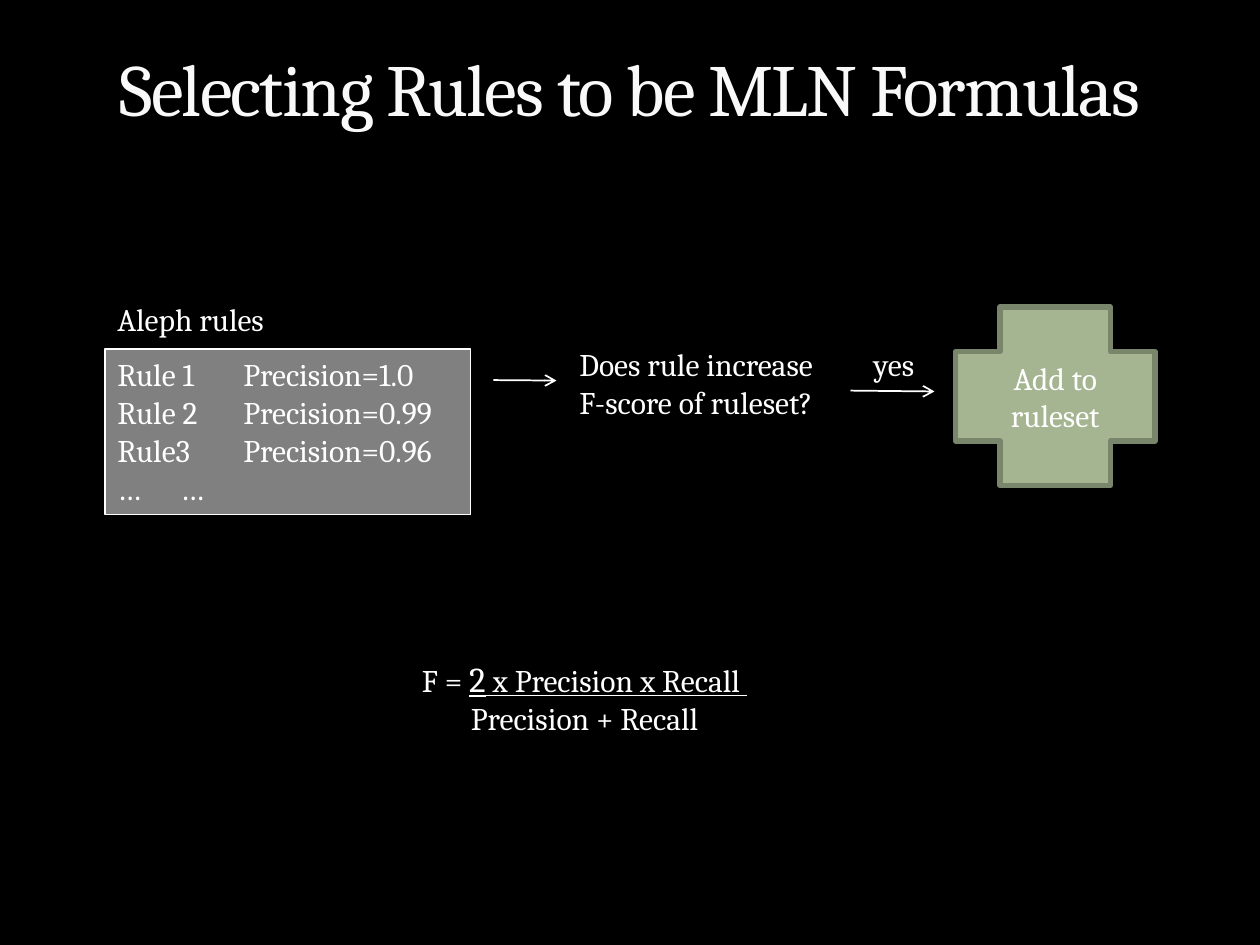
from dataclasses import dataclass

from lxml.etree import SubElement
from pptx import Presentation
from pptx.dml.color import RGBColor
from pptx.enum.shapes import MSO_CONNECTOR, MSO_SHAPE
from pptx.enum.text import MSO_ANCHOR, PP_ALIGN
from pptx.oxml import parse_xml
from pptx.oxml.ns import nsdecls, qn
from pptx.shapes.autoshape import Shape
from pptx.slide import Slide
from pptx.util import Pt

COLORS = {
    "background": "000000",
    "title": "F9F9F9",
    "title_outline": "3C4422",
    "text": "FFFFFF",
    "rules": "808080",
    "add": "A5B592",
    "add_border": "7A866C",
}
FONT = "Cambria"


@dataclass
class Block:
    """Text with its place in points, and the shape behind it if any."""
    text: str
    left: float
    top: float
    width: float
    height: float
    size: float = 18
    color: str = "text"
    centred: bool = False
    anchor: MSO_ANCHOR = MSO_ANCHOR.TOP
    preset: MSO_SHAPE | None = None
    fill: str = ""
    border: str = "text"
    border_width: float = 0.75


@dataclass
class Arrow:
    x1: float
    y1: float
    x2: float
    y2: float


TITLE = Block("Selecting Rules to be MLN Formulas", 36, 12.24, 648, 66.24,
              size=42, color="title", centred=True, anchor=MSO_ANCHOR.BOTTOM)
FORMULA = Block("F = 2 x Precision x Recall \nPrecision + Recall", 234, 372, 210, 53.3)
DENOMINATOR_INDENT = 28
FLOW = [
    Block("Rule 1\tPrecision=1.0\nRule 2\tPrecision=0.99\nRule3\tPrecision=0.96\n…\t…",
          60, 199.5, 208.8, 94.5, preset=MSO_SHAPE.RECTANGLE, fill="rules"),
    Block("Does rule increase\nF-score of ruleset?", 324, 193.5, 162, 51),
    Block("yes", 492, 193.5, 48, 29),
    Block("Add to\vruleset", 546, 175.5, 114, 102, centred=True, anchor=MSO_ANCHOR.MIDDLE,
          preset=MSO_SHAPE.CROSS, fill="add", border="add_border", border_width=3),
    Block("Aleph rules", 60, 168, 114, 30),
]
ARROWS = [Arrow(282, 217.2, 318, 217.5), Arrow(486, 223.2, 534, 223.7)]


def rgb(name: str) -> RGBColor:
    return RGBColor.from_string(COLORS[name])


def style_run(run, size: float, color: str) -> None:
    run.font.name = FONT
    run.font.size = Pt(size)
    run.font.color.rgb = rgb(color)


def draw_block(slide: Slide, block: Block) -> Shape:
    box = Pt(block.left), Pt(block.top), Pt(block.width), Pt(block.height)
    if block.preset is None:
        shape = slide.shapes.add_textbox(*box)
    else:
        shape = slide.shapes.add_shape(block.preset, *box)
        shape.shadow.inherit = False
        shape.fill.solid()
        shape.fill.fore_color.rgb = rgb(block.fill)
        shape.line.color.rgb = rgb(block.border)
        shape.line.width = Pt(block.border_width)
    frame = shape.text_frame
    frame.word_wrap = True
    frame.vertical_anchor = block.anchor
    frame.text = block.text
    for paragraph in frame.paragraphs:
        paragraph.alignment = PP_ALIGN.CENTER if block.centred else PP_ALIGN.LEFT
        for run in paragraph.runs:
            style_run(run, block.size, block.color)
    return shape


def draw_title(slide: Slide) -> None:
    """Draw the title with tight letters and a faint outline."""
    run = draw_block(slide, TITLE).text_frame.paragraphs[0].runs[0]
    properties = run.font._element
    properties.set("spc", "-100")
    properties.insert(0, parse_xml(
        f'<a:ln {nsdecls("a")} w="3175"><a:solidFill>'
        f'<a:srgbClr val="{COLORS["title_outline"]}"><a:alpha val="25000"/></a:srgbClr>'
        '</a:solidFill></a:ln>'))


def draw_formula(slide: Slide) -> None:
    """Draw the F-score, its numerator underlined as the fraction bar."""
    numerator, denominator = draw_block(slide, FORMULA).text_frame.paragraphs
    numerator.runs[0].text = "F = "
    for part, size in (("2", 20), (" x Precision x Recall ", 18)):
        run = numerator.add_run()
        run.text = part
        style_run(run, size, FORMULA.color)
        run.font.underline = True
    denominator._p.get_or_add_pPr().set("marL", str(Pt(DENOMINATOR_INDENT)))


def draw_arrow(slide: Slide, arrow: Arrow) -> None:
    connector = slide.shapes.add_connector(
        MSO_CONNECTOR.STRAIGHT, Pt(arrow.x1), Pt(arrow.y1), Pt(arrow.x2), Pt(arrow.y2))
    connector.line.color.rgb = rgb("text")
    connector.line.width = Pt(1)
    SubElement(connector.line._get_or_add_ln(), qn("a:tailEnd"), type="arrow")
    SubElement(connector._element.spPr, qn("a:effectLst"))


def main() -> None:
    deck = Presentation()
    deck.slide_width, deck.slide_height = Pt(720), Pt(540)
    slide = deck.slides.add_slide(deck.slide_layouts[6])
    slide.background.fill.solid()
    slide.background.fill.fore_color.rgb = rgb("background")
    draw_title(slide)
    for block in FLOW:
        draw_block(slide, block)
    for arrow in ARROWS:
        draw_arrow(slide, arrow)
    draw_formula(slide)
    deck.save("out.pptx")


if __name__ == "__main__":
    main()
